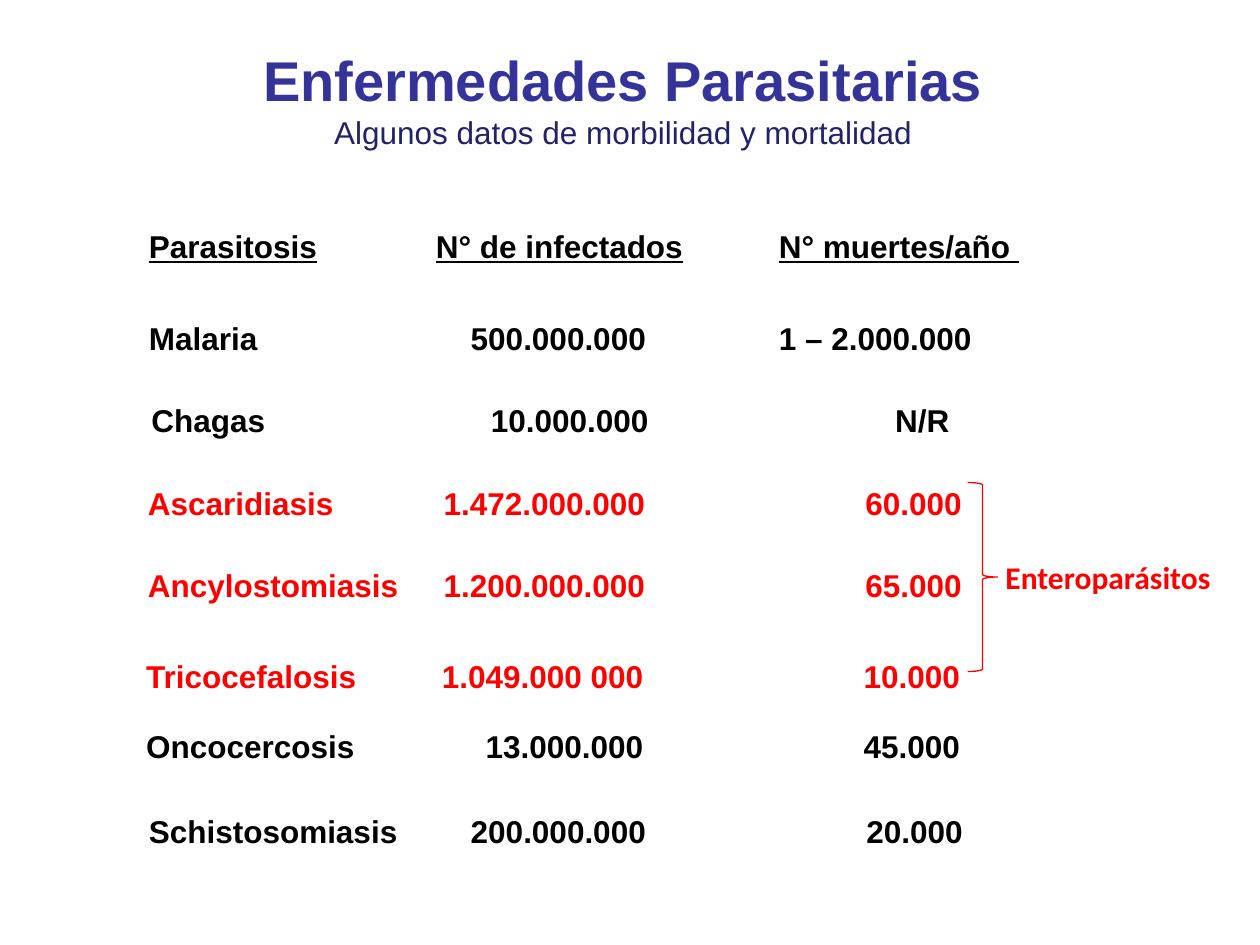
from dataclasses import dataclass

from lxml.etree import SubElement
from pptx import Presentation
from pptx.dml.color import RGBColor
from pptx.enum.shapes import MSO_SHAPE
from pptx.enum.text import MSO_ANCHOR, MSO_AUTO_SIZE, PP_ALIGN
from pptx.oxml.ns import qn
from pptx.util import Pt

BLACK = RGBColor(0x00, 0x00, 0x00)
WHITE = RGBColor(0xFF, 0xFF, 0xFF)
RED = RGBColor(0xFF, 0x00, 0x00)
TITLE_BLUE = RGBColor(0x33, 0x33, 0x99)
SUBTITLE_BLUE = RGBColor(0x22, 0x22, 0x68)

ROW_HEIGHT = 29


@dataclass(frozen=True)
class TabStop:
    position: float
    alignment: str


INFECTED_HEADING = TabStop(164, "l")
INFECTED_NUMBER = TabStop(284, "r")
DEATHS_LEFT = TabStop(360, "l")
DEATHS_CENTRE = TabStop(440.5, "ctr")
DEATHS_NUMBER = TabStop(465, "r")


@dataclass(frozen=True)
class Row:
    left: float
    top: float
    cells: tuple[str, str, str]
    color: RGBColor = BLACK
    infected_tab: TabStop = INFECTED_NUMBER
    deaths_tab: TabStop = DEATHS_NUMBER
    underline: bool = False
    width: float = 559


ROWS = (
    Row(78, 126, ("Parasitosis", "N° de infectados", "N° muertes/año "),
        infected_tab=INFECTED_HEADING, deaths_tab=DEATHS_LEFT, underline=True, width=592),
    Row(78, 178.5, ("Malaria", "500.000.000", "1 – 2.000.000"), deaths_tab=DEATHS_LEFT),
    Row(79.5, 225.5, ("Chagas", "10.000.000", "N/R"), deaths_tab=DEATHS_CENTRE),
    Row(77.5, 273, ("Ascaridiasis", "1.472.000.000", "60.000"), RED),
    Row(77.5, 320, ("Ancylostomiasis", "1.200.000.000", "65.000"), RED),
    Row(76.5, 372, ("Tricocefalosis", "1.049.000 000", "10.000"), RED),
    Row(76.5, 412, ("Oncocercosis", "13.000.000", "45.000")),
    Row(78, 460.5, ("Schistosomiasis", "200.000.000", "20.000")),
)


def add_run(paragraph, text: str, color: RGBColor, **formats) -> None:
    run = paragraph.add_run()
    run.text = text
    values = {"name": "Arial", "size": Pt(18), "bold": True} | formats
    for name, value in values.items():
        setattr(run.font, name, value)
    run.font.color.rgb = color


def format_frame(frame, **formats) -> None:
    values = {"word_wrap": True, "auto_size": MSO_AUTO_SIZE.SHAPE_TO_FIT_TEXT,
              "vertical_anchor": MSO_ANCHOR.TOP} | formats
    for name, value in values.items():
        setattr(frame, name, value)


def add_tab_stops(paragraph, *stops: TabStop) -> None:
    tab_list = SubElement(paragraph._p.get_or_add_pPr(), qn("a:tabLst"))
    for stop in stops:
        SubElement(tab_list, qn("a:tab"), pos=str(Pt(stop.position)), algn=stop.alignment)


def add_title(slide) -> None:
    title = slide.shapes.title
    box = {"left": 101.5, "top": 22.5, "width": 509, "height": 67.5}
    for name, value in box.items():
        setattr(title, name, Pt(value))
    frame = title.text_frame
    format_frame(frame)
    heading, subtitle = frame.paragraphs[0], frame.add_paragraph()
    for paragraph in (heading, subtitle):
        paragraph.alignment = PP_ALIGN.CENTER
        paragraph.space_before = Pt(0)
    add_run(heading, "Enfermedades Parasitarias", TITLE_BLUE, size=Pt(32))
    add_run(subtitle, "Algunos datos de morbilidad y mortalidad", SUBTITLE_BLUE, bold=False)


def add_row(slide, row: Row) -> None:
    shape = slide.shapes.add_shape(
        MSO_SHAPE.RECTANGLE, Pt(row.left), Pt(row.top), Pt(row.width), Pt(ROW_HEIGHT))
    shape.shadow.inherit = False
    shape.fill.solid()
    shape.fill.fore_color.rgb = WHITE
    shape.line.fill.background()
    format_frame(shape.text_frame)
    paragraph = shape.text_frame.paragraphs[0]
    paragraph.alignment = PP_ALIGN.LEFT
    add_tab_stops(paragraph, row.infected_tab, row.deaths_tab)
    for index, cell in enumerate(row.cells):
        if index:
            add_run(paragraph, "\t", row.color, underline=False)
        add_run(paragraph, cell, row.color, underline=row.underline)


def add_group_label(slide) -> None:
    brace = slide.shapes.add_shape(
        MSO_SHAPE.RIGHT_BRACE, Pt(553), Pt(275.75), Pt(17), Pt(108))
    brace.shadow.inherit = False
    brace.fill.background()
    brace.line.color.rgb = RED
    brace.line.width = Pt(0.75)

    label = slide.shapes.add_textbox(Pt(567.5), Pt(315.5), Pt(152.5), Pt(ROW_HEIGHT))
    format_frame(label.text_frame, word_wrap=False)
    add_run(label.text_frame.paragraphs[0], "Enteroparásitos", RED, name="Calibri")


def main() -> None:
    presentation = Presentation()
    presentation.slide_width, presentation.slide_height = Pt(720), Pt(540)
    slide = presentation.slides.add_slide(presentation.slide_layouts[5])

    # Title and subtitle
    add_title(slide)
    # Figures for each disease
    for row in ROWS:
        add_row(slide, row)
    # Brace around the intestinal parasites
    add_group_label(slide)

    presentation.save("out.pptx")


if __name__ == "__main__":
    main()
